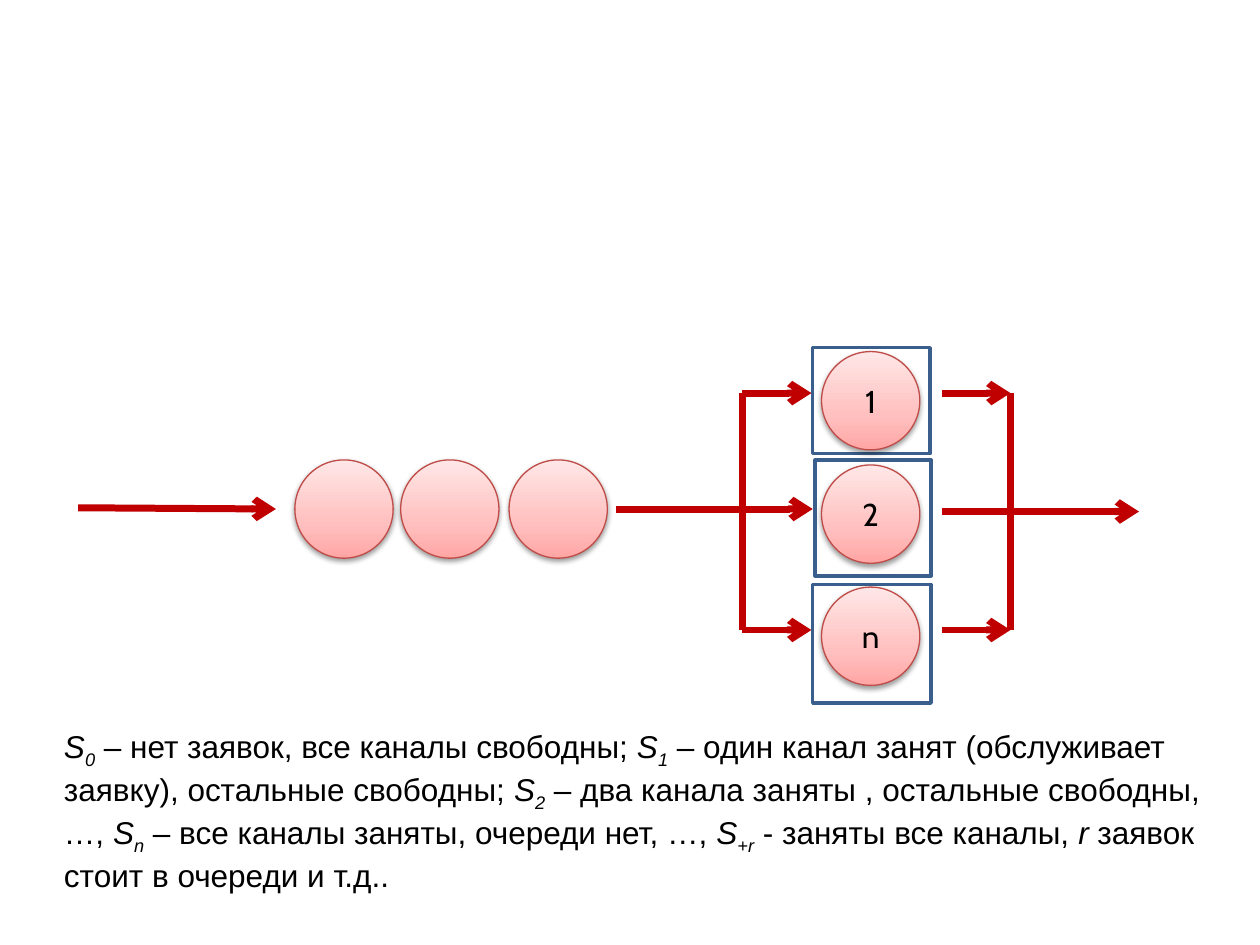
from dataclasses import dataclass

from lxml import etree
from pptx import Presentation
from pptx.dml.color import RGBColor
from pptx.enum.shapes import MSO_CONNECTOR as Connector, MSO_SHAPE as Shape
from pptx.enum.text import MSO_ANCHOR as Anchor, MSO_AUTO_SIZE as AutoSize, PP_ALIGN as Align
from pptx.oxml.ns import qn
from pptx.util import Inches, Pt


@dataclass(frozen=True)
class Theme:
    arrow: RGBColor = RGBColor(0xC0, 0x00, 0x00)
    frame: RGBColor = RGBColor(0x3A, 0x5F, 0x8C)
    outline: RGBColor = RGBColor(0xBF, 0x4C, 0x48)
    text: RGBColor = RGBColor(0x00, 0x00, 0x00)
    gradient: tuple = ((0, "FFA6A5"), (35, "FFC0BF"), (100, "FFE7E7"))
    shadow: str = "000000"
    size: Pt = Pt(18)
    label_font: str = "Cabin"
    body_font: str = "Arial"


theme = Theme()
presentation = Presentation()
presentation.slide_width = Inches(10)
presentation.slide_height = Inches(7.5)
slide = presentation.slides.add_slide(presentation.slide_layouts[6])


def add_line(start, end, arrow=True):
    line = slide.shapes.add_connector(Connector.STRAIGHT, *map(Inches, start + end))
    line.line.color.rgb = theme.arrow
    line.line.width = Pt(4)
    if arrow:
        etree.SubElement(line.line._get_or_add_ln(), qn("a:tailEnd"), type="arrow")
    etree.SubElement(line._element.spPr, qn("a:effectLst"))


def add_request(left, top, label=""):
    """Draw one request as a shaded circle, labelled when it is in a channel."""
    circle = slide.shapes.add_shape(
        Shape.OVAL, Inches(left), Inches(top), Inches(0.78), Inches(0.78))
    circle.line.color.rgb = theme.outline
    circle.line.width = Pt(0.75)
    circle.fill.gradient()
    circle.fill.gradient_angle = 90
    properties = circle._element.spPr
    stops = properties.find(".//" + qn("a:gsLst"))
    for stop in list(stops):
        stops.remove(stop)
    for position, color in theme.gradient:
        stop = etree.SubElement(stops, qn("a:gs"), pos=str(position * 1000))
        etree.SubElement(stop, qn("a:srgbClr"), val=color)

    circle.shadow.inherit = False
    shadow = etree.SubElement(
        properties.find(qn("a:effectLst")), qn("a:outerShdw"),
        blurRad=str(Pt(3.1)), dist=str(Pt(1.6)), dir="5400000", rotWithShape="0")
    shadow_color = etree.SubElement(shadow, qn("a:srgbClr"), val=theme.shadow)
    etree.SubElement(shadow_color, qn("a:alpha"), val="38000")

    if label:
        circle.text_frame.vertical_anchor = Anchor.MIDDLE
        paragraph = circle.text_frame.paragraphs[0]
        paragraph.alignment = Align.CENTER
        run = paragraph.add_run()
        run.text = label
        run.font.size = theme.size
        run.font.name = theme.label_font
        run.font.color.rgb = theme.text


# Main flow: arrival, service, departure
for start, end in (((0.62, 4.03), (2.19, 4.04)),
                   ((4.89, 4.04), (6.45, 4.04)),
                   ((7.48, 4.06), (9.04, 4.06))):
    add_line(start, end)

# Branches to and from the outer channels
branch_top, branch_bottom = 3.12, 5
for left, right in ((5.89, 6.44), (7.48, 8.02)):
    for y in (branch_top, branch_bottom):
        add_line((left, y), (right, y))
for x in (5.89, 8.02):
    add_line((x, branch_top), (x, branch_bottom), arrow=False)

# Queue
for left in (2.34, 3.18, 4.04):
    add_request(left, 3.65)

# Channels: label, circle top, frame box
for label, circle_top, box in (("1", 2.79, (6.45, 2.76, 0.93, 0.84)),
                               ("2", 3.69, (6.47, 3.65, 0.92, 0.92)),
                               ("n", 4.66, (6.45, 4.64, 0.94, 0.94))):
    frame = slide.shapes.add_shape(Shape.RECTANGLE, *map(Inches, box))
    frame.shadow.inherit = False
    frame.fill.background()
    frame.line.color.rgb = theme.frame
    frame.line.width = Pt(2)
    add_request(6.52, circle_top, label)

# State descriptions: symbol, subscript, explanation
states = (
    ("S", "0", " – нет заявок, все каналы свободны; "),
    ("S", "1", " – один канал занят (обслуживает заявку), остальные свободны; "),
    ("S", "2", " – два канала заняты , остальные свободны, …, "),
    ("S", "n", " – все каналы заняты, очереди нет, …, "),
    ("S", "+r", " - заняты все каналы, "),
    ("r", "", " заявок стоит в очереди и т.д.."),
)
text_box = slide.shapes.add_textbox(Inches(0.41), Inches(5.72), Inches(9.53), Inches(1.31))
text_box.text_frame.word_wrap = True
text_box.text_frame.auto_size = AutoSize.SHAPE_TO_FIT_TEXT
paragraph = text_box.text_frame.paragraphs[0]
for symbol, subscript, explanation in states:
    for text, italic, baseline in ((symbol, True, 0),
                                   (subscript, True, -25),
                                   (explanation, False, 0)):
        if not text:
            continue
        run = paragraph.add_run()
        run.text = text
        run.font.size = theme.size
        run.font.name = theme.body_font
        run.font.color.rgb = theme.text
        run.font.italic = italic
        if baseline:
            run.font._element.set("baseline", str(baseline * 1000))

presentation.save("out.pptx")
